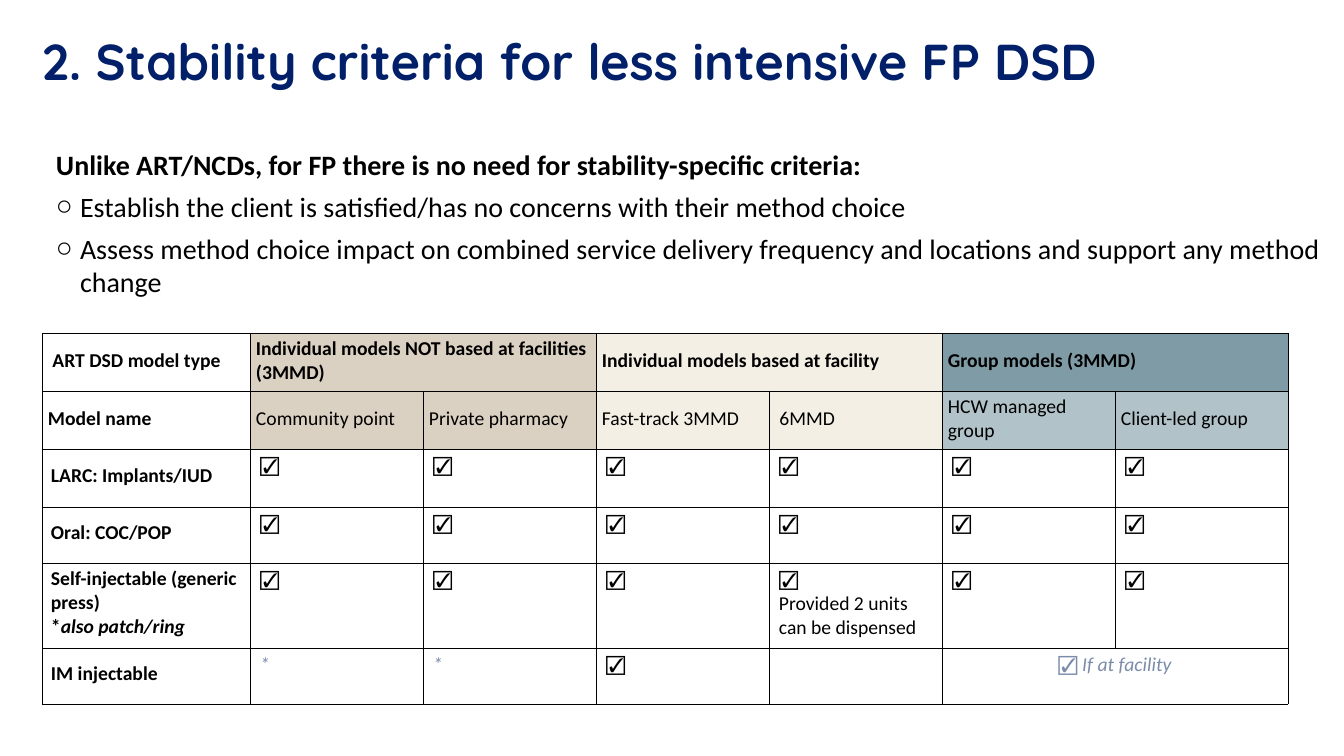
from dataclasses import dataclass

import pptx
import pptx.dml.color
import pptx.enum.text
import pptx.oxml.ns
import pptx.util
from lxml import etree

EMU_PER_PX = 914400 / 100.8


@dataclass(frozen=True)
class Theme:
    heading_font: str = "Quicksand"
    body_font: str = "Calibri"
    title_size: int = 36
    body_size: int = 20
    table_size: int = 14
    navy: str = "022069"
    black: str = "000000"
    white: str = "FFFFFF"
    muted: str = "7B8CAA"
    sand: str = "DBD1C2"
    cream: str = "F4EFE4"
    slate: str = "7F9CA6"
    pale_slate: str = "B1C2C8"


THEME = Theme()


@dataclass(frozen=True)
class Phrase:
    text: str
    bold: bool = False
    italic: bool = False
    color: str = THEME.black


TITLE = "2. Stability criteria for less intensive FP DSD"
LEAD = "Unlike ART/NCDs, for FP there is no need for stability-specific criteria:"
CRITERIA = [
    "Establish the client is satisfied/has no concerns with their method choice",
    "Assess method choice impact on combined service delivery frequency and "
    "locations and support any method change",
]
MODEL_GROUPS = [
    ("Individual models NOT based at facilities (3MMD)", THEME.sand),
    ("Individual models based at facility", THEME.cream),
    ("Group models (3MMD)", THEME.slate),
]
MODELS = [
    ("Community point", THEME.sand),
    ("Private pharmacy", THEME.sand),
    ("Fast-track 3MMD", THEME.cream),
    (" 6MMD", THEME.cream),
    ("HCW managed group", THEME.pale_slate),
    ("Client-led group", THEME.pale_slate),
]
TICK = [[Phrase("☑")]]
STAR = [[Phrase("*", italic=True, color=THEME.muted)]]
METHODS = [
    ([[Phrase("LARC: Implants/IUD", bold=True)]], [TICK] * 6),
    ([[Phrase("Oral: COC/POP", bold=True)]], [TICK] * 6),
    ([[Phrase("Self-injectable (generic press)", bold=True)],
      [Phrase("*", bold=True), Phrase("also patch/ring", bold=True, italic=True)]],
     [TICK] * 3 + [TICK + [[Phrase("Provided 2 units can be dispensed")]]] + [TICK] * 2),
    ([[Phrase("IM injectable", bold=True)]], [STAR, STAR, TICK, []]),
]
FACILITY_ONLY = [[Phrase("☑ ", color=THEME.muted),
                  Phrase("If at facility", italic=True, color=THEME.muted)]]
COLUMN_WIDTHS = [208] + [173] * 6
ROW_HEIGHTS = [58, 58, 58, 56, 85, 56]
HEADER_INSETS = (6, 4, 4, 6)
METHOD_INSETS = (9, 4, 4, 9)
VALUE_INSETS = (10, 5, 10, 5)


def px(length):
    return pptx.util.Emu(round(length * EMU_PER_PX))


def rgb(color):
    return pptx.dml.color.RGBColor.from_string(color)


def add_element(parent, tag, **attributes):
    return etree.SubElement(parent, pptx.oxml.ns.qn(tag), attributes)


def style_font(font, name, size, phrase):
    font.name = name
    font.size = pptx.util.Pt(size)
    font.bold = phrase.bold
    font.italic = phrase.italic
    font.color.rgb = rgb(phrase.color)


def place_placeholder(placeholder, left, top, width, height):
    placeholder.left, placeholder.top = px(left), px(top)
    placeholder.width, placeholder.height = px(width), px(height)
    frame = placeholder.text_frame
    frame.margin_left = frame.margin_top = frame.margin_right = frame.margin_bottom = 0
    frame.word_wrap = True
    frame.auto_size = pptx.enum.text.MSO_AUTO_SIZE.NONE
    frame.vertical_anchor = pptx.enum.text.MSO_ANCHOR.TOP
    return frame


def write_title(placeholder):
    frame = place_placeholder(placeholder, 42, 37, 1273, 84)
    frame.text = TITLE
    heading = frame.paragraphs[0]
    heading.alignment = pptx.enum.text.PP_ALIGN.LEFT
    heading.line_spacing = 0.9
    style_font(heading.runs[0].font, THEME.heading_font, THEME.title_size,
               Phrase(TITLE, bold=True, color=THEME.navy))


def write_criteria(placeholder):
    frame = place_placeholder(placeholder, 56, 147, 1273, 301)
    frame.text = "\n".join([LEAD] + CRITERIA)
    for position, paragraph in enumerate(frame.paragraphs):
        is_lead = position == 0
        indent = px(0 if is_lead else 24)
        properties = paragraph._p.get_or_add_pPr()
        properties.set("marL", str(indent))
        properties.set("indent", str(-indent))
        if is_lead:
            add_element(properties, "a:buNone")
        else:
            add_element(properties, "a:buChar", char="○")
        paragraph.space_before = pptx.util.Pt(0)
        paragraph.space_after = pptx.util.Pt(6)
        style_font(paragraph.runs[0].font, THEME.body_font, THEME.body_size,
                   Phrase(paragraph.text, bold=is_lead))


def draw_borders(cell):
    properties = cell._tc.get_or_add_tcPr()
    for position, edge in enumerate(("a:lnL", "a:lnR", "a:lnT", "a:lnB")):
        line = add_element(properties, edge, w=str(pptx.util.Pt(0.25)))
        add_element(add_element(line, "a:solidFill"), "a:srgbClr", val=THEME.black)
        properties.insert(position, line)


def write_cell(cell, lines, insets, middle=True, centered=False, fill=THEME.white):
    """Fill a cell with lines, each a list of phrases; insets run left, top, right, bottom."""
    cell.margin_left, cell.margin_top, cell.margin_right, cell.margin_bottom = map(px, insets)
    anchors = pptx.enum.text.MSO_ANCHOR
    cell.vertical_anchor = anchors.MIDDLE if middle else anchors.TOP
    cell.fill.solid()
    cell.fill.fore_color.rgb = rgb(fill)
    frame = cell.text_frame
    for position, phrases in enumerate(lines):
        paragraph = frame.add_paragraph() if position else frame.paragraphs[0]
        if centered:
            paragraph.alignment = pptx.enum.text.PP_ALIGN.CENTER
        for phrase in phrases:
            run = paragraph.add_run()
            run.text = phrase.text
            style_font(run.font, THEME.body_font, THEME.table_size, phrase)


def write_header(cell, text, fill=THEME.white, bold=True):
    write_cell(cell, [[Phrase(text, bold=bold)]], HEADER_INSETS, fill=fill)


def add_model_table(slide):
    table = slide.shapes.add_table(
        len(ROW_HEIGHTS), len(COLUMN_WIDTHS), px(42), px(333),
        px(sum(COLUMN_WIDTHS)), px(sum(ROW_HEIGHTS))).table
    table.first_row = table.horz_banding = False
    for column, width in zip(table.columns, COLUMN_WIDTHS):
        column.width = px(width)
    for row, height in zip(table.rows, ROW_HEIGHTS):
        row.height = px(height)

    write_header(table.cell(0, 0), "\N{NO-BREAK SPACE}ART DSD model type")
    for group, (name, fill) in enumerate(MODEL_GROUPS):
        first = 1 + 2 * group
        table.cell(0, first).merge(table.cell(0, first + 1))
        write_header(table.cell(0, first), name, fill)
    write_header(table.cell(1, 0), "Model name")
    for column, (name, fill) in enumerate(MODELS, start=1):
        write_header(table.cell(1, column), name, fill, bold=False)

    for row, (method, values) in enumerate(METHODS, start=2):
        write_cell(table.cell(row, 0), method, METHOD_INSETS)
        for column, value in enumerate(values, start=1):
            write_cell(table.cell(row, column), value, VALUE_INSETS, middle=False)
    table.cell(5, 5).merge(table.cell(5, 6))
    write_cell(table.cell(5, 5), FACILITY_ONLY, VALUE_INSETS, middle=False, centered=True)
    for cell in table.iter_cells():
        draw_borders(cell)


def main():
    presentation = pptx.Presentation()
    presentation.slide_width, presentation.slide_height = px(1344), px(756)
    slide = presentation.slides.add_slide(presentation.slide_layouts[1])
    write_title(slide.shapes.title)
    write_criteria(slide.placeholders[1])
    add_model_table(slide)
    presentation.save("out.pptx")


if __name__ == "__main__":
    main()
